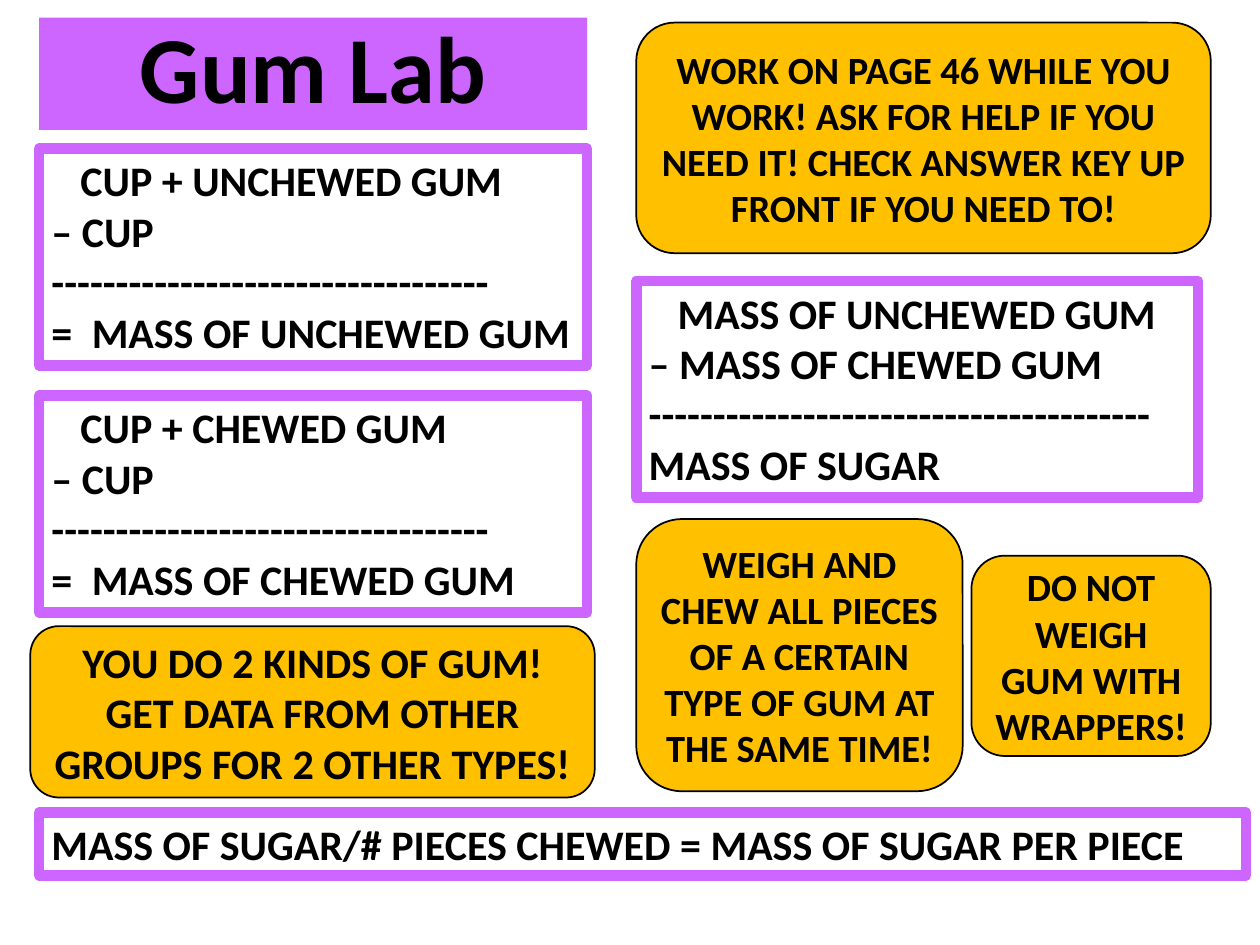
from pptx import Presentation
from pptx.dml.color import RGBColor
from pptx.enum.shapes import MSO_SHAPE
from pptx.enum.text import MSO_ANCHOR, PP_ALIGN
from pptx.util import Inches, Pt

PURPLE, AMBER, BLACK = "CC66FF", "FFC000", "000000"
LEFT, RIGHT = 0.31, 5.05
ROUNDED = MSO_SHAPE.ROUNDED_RECTANGLE
PROCESS = MSO_SHAPE.FLOWCHART_ALTERNATE_PROCESS
PLUS_INDENT, EQUALS_INDENT = 0.23, 0.32


def color(value):
    """Turn a hex string into a colour."""
    return RGBColor.from_string(value)


def style(para, size, align=PP_ALIGN.LEFT):
    """Give a paragraph the bold black lettering of the slide."""
    para.alignment = align
    para.font.name = "Calibri"
    para.font.size = Pt(size)
    para.font.bold = True
    para.font.color.rgb = color(BLACK)


def indent(para, margin, first):
    """Set the left margin and first-line offset of a paragraph."""
    properties = para._p.get_or_add_pPr()
    properties.set("marL", str(Inches(margin)))
    properties.set("indent", str(Inches(first)))


def add_title(page, box, text):
    """Place the filled title bar."""
    shape = page.shapes.add_textbox(*map(Inches, box))
    shape.fill.solid()
    shape.fill.fore_color.rgb = color(PURPLE)
    frame = shape.text_frame
    frame.word_wrap = True
    frame.vertical_anchor = MSO_ANCHOR.BOTTOM
    para = frame.paragraphs[0]
    para.text = text
    para.line_spacing = 0.9
    style(para, 54, PP_ALIGN.CENTER)


def add_formula(page, box, lines):
    """Place an outlined box with one paragraph for each formula line."""
    shape = page.shapes.add_textbox(*map(Inches, box))
    shape.line.color.rgb = color(PURPLE)
    shape.line.width = Pt(6)
    frame = shape.text_frame
    frame.word_wrap = True
    frame.text = "\n".join(lines)
    for para in frame.paragraphs:
        style(para, 24)
        if para.text.startswith("="):
            indent(para, EQUALS_INDENT, -EQUALS_INDENT)
    if len(lines) > 1:
        indent(frame.paragraphs[0], PLUS_INDENT, 0)


def add_note(page, kind, box, text, size):
    """Place a rounded amber note with centred text."""
    shape = page.shapes.add_shape(kind, *map(Inches, box))
    shape.shadow.inherit = False
    shape.fill.solid()
    shape.fill.fore_color.rgb = color(AMBER)
    shape.line.color.rgb = color(BLACK)
    shape.line.width = Pt(1)
    frame = shape.text_frame
    frame.word_wrap = True
    frame.vertical_anchor = MSO_ANCHOR.MIDDLE
    frame.margin_left = frame.margin_right = Inches(0.07)
    frame.margin_top = frame.margin_bottom = Inches(0.04)
    frame.text = text
    style(frame.paragraphs[0], size, PP_ALIGN.CENTER)


def main():
    """Build and save the gum lab slide."""
    deck = Presentation()
    deck.slide_width, deck.slide_height = Inches(10), Inches(7.5)
    page = deck.slides.add_slide(deck.slide_layouts[6])

    add_title(page, (LEFT, 0.14, 4.35, 0.89), "Gum Lab")
    for top, state in ((1.18, "UNCHEWED"), (3.14, "CHEWED")):
        add_formula(page, (LEFT, top, 4.35, 1.72), [
            f"CUP + {state} GUM", "– CUP", "-" * 34, f"=\tMASS OF {state} GUM"])
    add_formula(page, (RIGHT, 2.23, 4.46, 1.72), [
        "MASS OF UNCHEWED GUM", "– MASS OF CHEWED GUM", "-" * 39, "MASS OF SUGAR"])
    add_formula(page, (LEFT, 6.45, 9.58, 0.5), [
        "MASS OF SUGAR/# PIECES CHEWED = MASS OF SUGAR PER PIECE"])

    notes = [
        (ROUNDED, (7.71, 4.41, 1.9, 1.59), "DO NOT WEIGH GUM WITH WRAPPERS!", 22),
        (PROCESS, (0.24, 4.97, 4.48, 1.36),
         "YOU DO 2 KINDS OF GUM! GET DATA FROM OTHER GROUPS FOR 2 OTHER TYPES!", 24),
        (PROCESS, (RIGHT, 0.18, 4.56, 1.83),
         "WORK ON PAGE 46 WHILE YOU WORK! ASK FOR HELP IF YOU NEED IT! "
         "CHECK ANSWER KEY UP FRONT IF YOU NEED TO!", 22),
        (ROUNDED, (RIGHT, 4.12, 2.59, 2.16),
         "WEIGH AND CHEW ALL PIECES OF A CERTAIN TYPE OF GUM AT THE SAME TIME!", 22),
    ]
    for note in notes:
        add_note(page, *note)
    deck.save("out.pptx")


if __name__ == "__main__":
    main()
